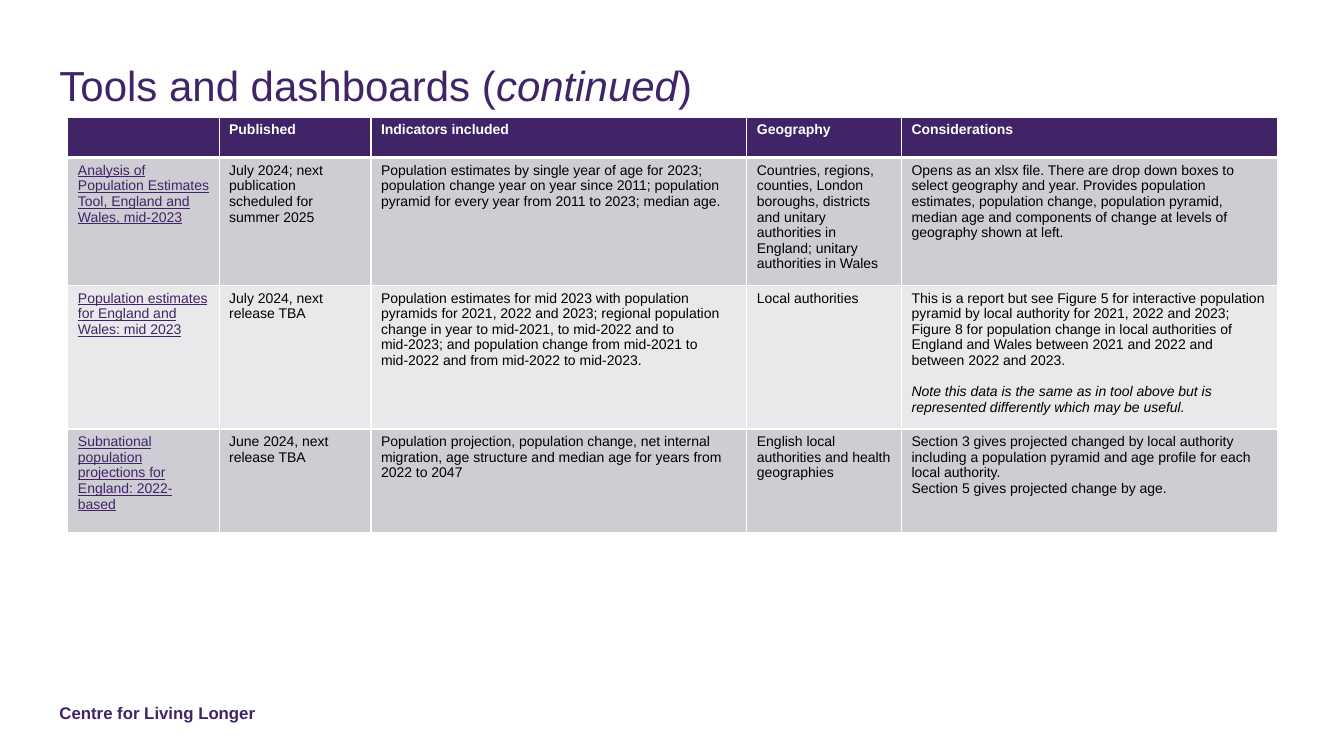
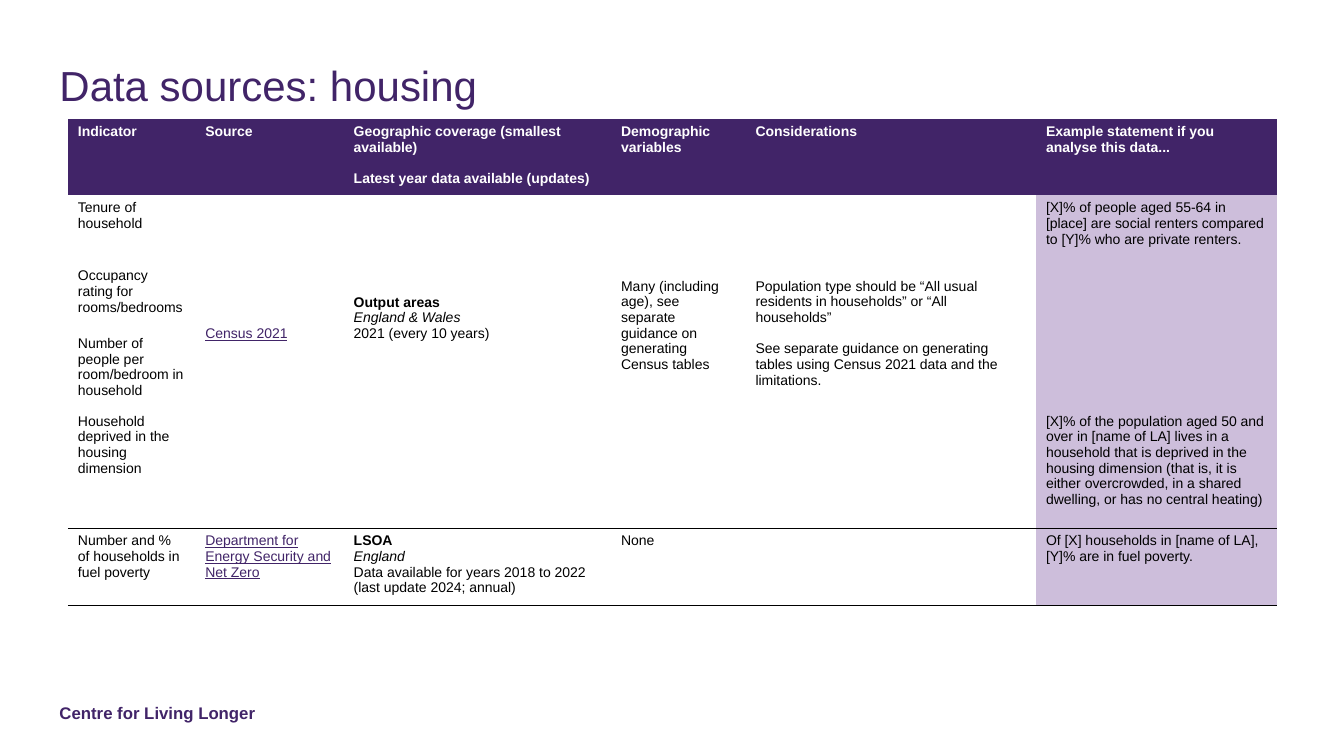
from dataclasses import dataclass

from lxml import etree
from pptx import Presentation
from pptx.dml.color import RGBColor
from pptx.enum import text as t
from pptx.oxml import ns
from pptx.util import Pt


@dataclass(frozen=True)
class Theme:
    font: str = "Arial"
    purple: str = "412468"
    lilac: str = "CDBEDB"
    dark: str = "CFCDD4"
    light: str = "E9E8EB"
    white: str = "FFFFFF"
    black: str = "000000"
    title: float = 30
    foot: float = 12
    body: float = 10
    lead: float = 11.2  # height of one body line
    pad: float = 3.6


@dataclass(frozen=True)
class Line:
    """One paragraph with its own format; gap is the number of lines above."""
    words: str
    bold: bool = False
    ital: bool = False
    link: bool = False
    gap: int = 0


TH = Theme()
SIDES = {"l": "a:lnL", "r": "a:lnR", "t": "a:lnT", "b": "a:lnB"}


def write(para, words, size=TH.body, color=TH.black, bold=False, ital=False, under=False):
    run = para.add_run()
    run.text = words
    font = run.font
    font.name, font.size = TH.font, Pt(size)
    font.color.rgb = RGBColor.from_string(color)
    font.bold, font.italic, font.underline = bold, ital, under


def add_box(slide, left, top, width, height):
    """Add a text box without insets and return its first paragraph."""
    frame = slide.shapes.add_textbox(Pt(left), Pt(top), Pt(width), Pt(height)).text_frame
    frame.word_wrap = True
    frame.vertical_anchor = t.MSO_ANCHOR.TOP
    frame.margin_left = frame.margin_right = frame.margin_top = frame.margin_bottom = 0
    return frame.paragraphs[0]


def add_page(deck, title, extra=""):
    """Add a slide with footer and title; extra stands in italic brackets."""
    slide = deck.slides.add_slide(deck.slide_layouts[6])
    write(add_box(slide, 42.5, 502, 256, 14.5), "Centre for Living Longer",
          size=TH.foot, color=TH.purple, bold=True)
    para = add_box(slide, 42.5, 42.5, 875, 81)
    para.line_spacing = Pt(36)
    parts = [(title + " (", False), (extra, True), (")", False)] if extra else [(title, False)]
    for words, ital in parts:
        write(para, words, size=TH.title, color=TH.purple, ital=ital)
    return slide


def set_edges(cell, **edges):
    """Set each side to (colour, points); sides not named get no line."""
    props = cell._tc.get_or_add_tcPr()
    for spot, (side, tag) in enumerate(SIDES.items()):
        line = etree.Element(ns.qn(tag))
        if side in edges:
            color, width = edges[side]
            line.set("w", str(Pt(width)))
            fill = etree.SubElement(line, ns.qn("a:solidFill"))
            etree.SubElement(fill, ns.qn("a:srgbClr"), val=color)
        else:
            line.set("w", "0")
            etree.SubElement(line, ns.qn("a:noFill"))
        props.insert(spot, line)


def fill_cell(cell, lines, color=TH.black, bold=False, back=None, drop=0):
    """Fill a cell with lines that start drop lines below its top."""
    if back:
        cell.fill.solid()
        cell.fill.fore_color.rgb = RGBColor.from_string(back)
    else:
        cell.fill.background()
    cell.margin_top = Pt(TH.pad + drop * TH.lead)
    cell.margin_bottom = Pt(TH.pad)
    cell.margin_left = cell.margin_right = Pt(2 * TH.pad)
    frame = cell.text_frame
    for spot, line in enumerate(lines):
        if isinstance(line, str):
            line = Line(line)
        para = frame.add_paragraph() if spot else frame.paragraphs[0]
        para.space_before = Pt(line.gap * TH.lead)
        write(para, line.words, color=TH.purple if line.link else color,
              bold=bold or line.bold, ital=line.ital, under=line.link)


def add_grid(slide, top, cols, rows):
    shape = slide.shapes.add_table(len(rows), len(cols), Pt(48.5), Pt(top),
                                   Pt(sum(cols)), Pt(sum(rows)))
    grid = shape.table
    grid.first_row = grid.horz_banding = False
    for col, width in zip(grid.columns, cols):
        col.width = Pt(width)
    for row, height in zip(grid.rows, rows):
        row.height = Pt(height)
    return grid


def build_tools(deck):
    slide = add_page(deck, "Tools and dashboards", "continued")
    rows = [
        [[], ["Published"], ["Indicators included"], ["Geography"], ["Considerations"]],
        [[Line("Analysis of Population Estimates Tool, England and Wales, mid-2023", link=True)],
         ["July 2024; next publication scheduled for summer 2025"],
         ["Population estimates by single year of age for 2023; population change year on year "
          "since 2011; population pyramid for every year from 2011 to 2023; median age."],
         ["Countries, regions, counties, London boroughs, districts and unitary authorities in "
          "England; unitary authorities in Wales"],
         ["Opens as an xlsx file. There are drop down boxes to select geography and year. "
          "Provides population estimates, population change, population pyramid, median age "
          "and components of change at levels of geography shown at left."]],
        [[Line("Population estimates for England and Wales: mid 2023", link=True)],
         ["July 2024, next release TBA"],
         ["Population estimates for mid 2023 with population pyramids for 2021, 2022 and 2023; "
          "regional population change in year to mid-2021, to mid-2022 and to mid-2023; and "
          "population change from mid-2021 to mid-2022 and from mid-2022 to mid-2023."],
         ["Local authorities"],
         ["This is a report but see Figure 5 for interactive population pyramid by local "
          "authority for 2021, 2022 and 2023; Figure 8 for population change in local "
          "authorities of England and Wales between 2021 and 2022 and between 2022 and 2023.",
          Line("Note this data is the same as in tool above but is represented differently "
               "which may be useful.", ital=True, gap=1)]],
        [[Line("Subnational population projections for England: 2022-based", link=True)],
         ["June 2024, next release TBA"],
         ["Population projection, population change, net internal migration, age structure and "
          "median age for years from 2022 to 2047"],
         ["English local authorities and health geographies"],
         ["Section 3 gives projected changed by local authority including a population pyramid "
          "and age profile for each local authority.",
          "Section 5 gives projected change by age."]],
    ]
    grid = add_grid(slide, 83.5, [108, 108.5, 268.5, 110.5, 268.5], [29, 85.5, 97, 74])
    thin, thick = (TH.white, 1), (TH.white, 3)
    for r, row in enumerate(rows):
        for c, lines in enumerate(row):
            cell = grid.cell(r, c)
            if r == 0:
                fill_cell(cell, lines, color=TH.white, bold=True, back=TH.purple)
            else:
                fill_cell(cell, lines, back=TH.dark if r % 2 else TH.light)
            set_edges(cell, l=thin, r=thin, t=thick if r == 1 else thin,
                      b=thick if r == 0 else thin)


def build_homes(deck):
    slide = add_page(deck, "Data sources: housing")
    rows = [
        [["Indicator"], ["Source"],
         ["Geographic coverage (smallest available)",
          Line("Latest year data available (updates)", gap=1)],
         ["Demographic variables"], ["Considerations"],
         ["Example statement if you analyse this data..."]],
        [["Tenure of household"],
         [Line("Census 2021", link=True)],
         [Line("Output areas", bold=True), Line("England & Wales", ital=True),
          "2021 (every 10 years)"],
         ["Many (including age), see separate guidance on generating Census tables"],
         ["Population type should be “All usual residents in households” or “All households”",
          Line("See separate guidance on generating tables using Census 2021 data and the "
               "limitations.", gap=1)],
         ["[X]% of people aged 55-64 in [place] are social renters compared to [Y]% who are "
          "private renters."]],
        [["Occupancy rating for rooms/bedrooms"], [], [], [], [], []],
        [["Number of people per room/bedroom in household"], [], [], [], [], []],
        [["Household deprived in the housing dimension"], [], [], [], [],
         ["[X]% of the population aged 50 and over in [name of LA] lives in a household that is "
          "deprived in the housing dimension (that is, it is either overcrowded, in a shared "
          "dwelling, or has no central heating)"]],
        [["Number and % of households in fuel poverty"],
         [Line("Department for Energy Security and Net Zero", link=True)],
         [Line("LSOA", bold=True), Line("England", ital=True),
          "Data available for years 2018 to 2022 (last update 2024; annual)"],
         ["None"], [],
         ["Of [X] households in [name of LA], [Y]% are in fuel poverty."]],
    ]
    grid = add_grid(slide, 85, [91, 106, 191, 96, 207.5, 172.5],
                    [52, 48.5, 48.5, 52, 85.5, 52])
    drops = {1: 8, 2: 6, 3: 5, 4: 5}
    for c in drops:
        grid.cell(1, c).merge(grid.cell(4, c))
    rule = (TH.black, 0.5)
    last = len(rows) - 1
    for r, row in enumerate(rows):
        edges = {"b": rule} if r >= last - 1 else {}
        if r == last:
            edges["t"] = rule
        for c, lines in enumerate(row):
            cell = grid.cell(r, c)
            if r == 0:
                fill_cell(cell, lines, color=TH.white, bold=True, back=TH.purple)
            else:
                fill_cell(cell, lines, back=TH.lilac if c == 5 else None,
                          drop=drops.get(c, 0) if r == 1 else 0)
            set_edges(cell, **edges)


def main():
    deck = Presentation()
    deck.slide_width, deck.slide_height = Pt(960), Pt(540)
    build_tools(deck)
    build_homes(deck)
    deck.save("out.pptx")


if __name__ == "__main__":
    main()
